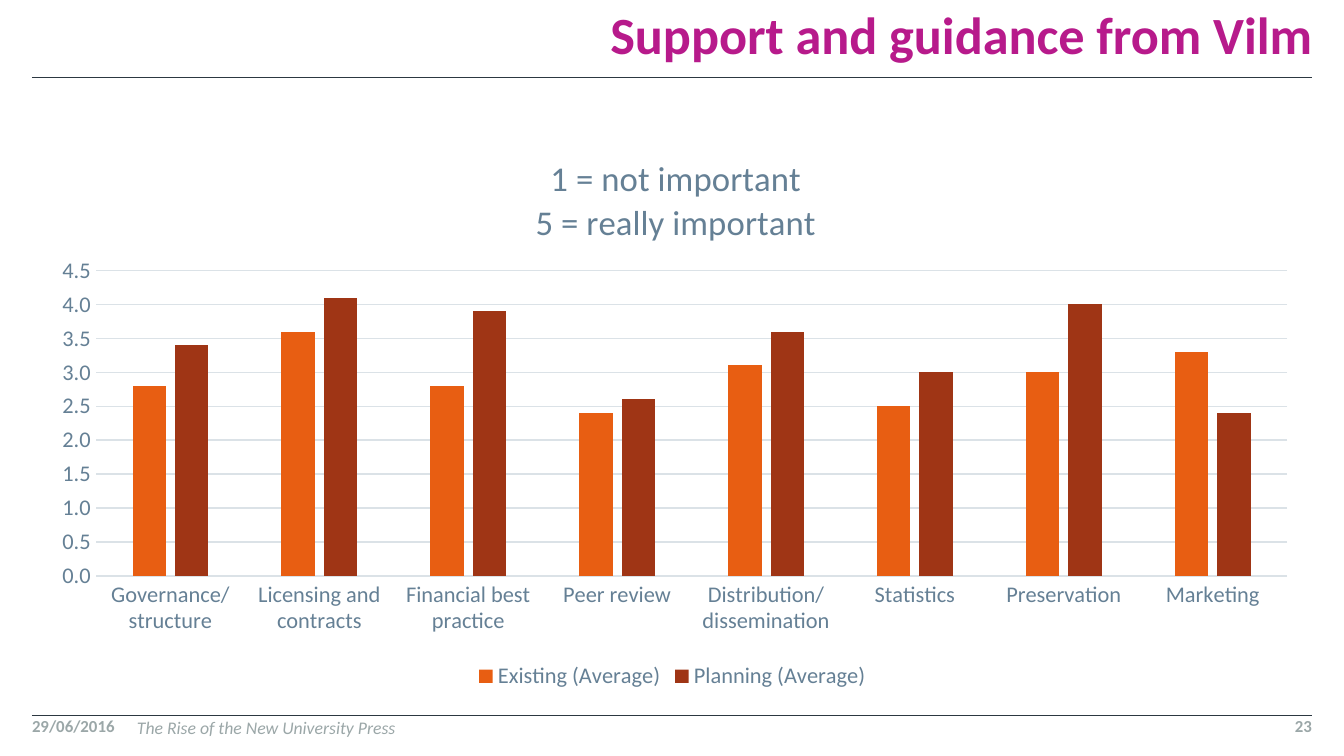
"""Build a slide with a clustered column chart of support needs."""
from dataclasses import dataclass

from lxml import etree
from pptx import Presentation
from pptx import util as u
from pptx.chart.data import CategoryChartData
from pptx.dml.color import RGBColor
from pptx.enum import chart as charts, shapes, text
from pptx.oxml import ns

SCALE = 914400 / 134.4
FONT = "Calibri"
LEFT, RIGHT = 32, 1312
COLORS = {"ink": "2C3841", "title": "B71A8B", "footer": "9BA7A8", "label": "658095",
          "grid": "DBE2E7", "Existing (Average)": "E85E12", "Planning (Average)": "9F3515"}
CATEGORIES = ["Governance/ structure", "Licensing and contracts", "Financial best practice",
              "Peer review", "Distribution/ dissemination", "Statistics", "Preservation",
              "Marketing"]
SERIES = {"Existing (Average)": [2.8, 3.6, 2.8, 2.4, 3.1, 2.5, 3, 3.3],
          "Planning (Average)": [3.4, 4.1, 3.9, 2.6, 3.6, 3, 4, 2.4]}


@dataclass(frozen=True)
class Label:
    """A line of text with its place and look."""
    words: str
    left: int
    top: int
    width: int
    height: int
    size: float
    color: str = "footer"
    bold: bool = True
    italic: bool = False
    align: text.PP_ALIGN = text.PP_ALIGN.LEFT
    anchor: text.MSO_ANCHOR = text.MSO_ANCHOR.TOP
    inset: int = 0
    spacing: float = 1.0


LABELS = [
    Label("Support and guidance from Vilm", 407, 0, 905, 66, 28, "title",
          align=text.PP_ALIGN.RIGHT, anchor=text.MSO_ANCHOR.BOTTOM, spacing=0.9),
    Label("29/06/2016", LEFT, 716, 106, 24, 9),
    Label("The Rise of the New University Press", 137, 716, 1068, 24, 9.5,
          bold=False, italic=True, inset=1),
    Label("23", 1207, 716, 105, 24, 9, align=text.PP_ALIGN.RIGHT),
]


def px(length: int) -> u.Emu:
    """Turn pixels into EMU."""
    return u.Emu(round(length * SCALE))


def rgb(name: str) -> RGBColor:
    """Look up a named colour."""
    return RGBColor.from_string(COLORS[name])


def style_font(font, size: float, color: str, bold: bool = False, italic: bool = False) -> None:
    """Set the face, size and colour of a font."""
    font.name, font.size = FONT, u.Pt(size)
    font.bold, font.italic = bold, italic
    font.color.rgb = rgb(color)


def style_line(line, color: str, width: float) -> None:
    """Set the colour and width of a line."""
    line.color.rgb = rgb(color)
    line.width = u.Pt(width)


def draw_label(page, label: Label) -> None:
    """Draw one text box."""
    box = page.shapes.add_textbox(*map(px, (label.left, label.top, label.width, label.height)))
    frame = box.text_frame
    frame.word_wrap = True
    frame.vertical_anchor = label.anchor
    frame.margin_left = frame.margin_right = frame.margin_bottom = 0
    frame.margin_top = px(label.inset)
    frame.text = label.words
    para = frame.paragraphs[0]
    para.alignment, para.line_spacing = label.align, label.spacing
    style_font(para.runs[0].font, label.size, label.color, label.bold, label.italic)


def draw_rule(page, top: int) -> None:
    """Draw a thin line across the page."""
    rule = page.shapes.add_connector(shapes.MSO_CONNECTOR.STRAIGHT,
                                     px(LEFT), px(top), px(RIGHT), px(top))
    style_line(rule.line, "ink", 0.5)
    etree.SubElement(rule._element.spPr, ns.qn("a:effectLst"))


def place(element, index: int, values: dict[str, str | float]) -> None:
    """Give a chart part a manual layout."""
    for old in element.findall(ns.qn("c:layout")):
        element.remove(old)
    layout = etree.Element(ns.qn("c:layout"))
    manual = etree.SubElement(layout, ns.qn("c:manualLayout"))
    for tag, value in values.items():
        etree.SubElement(manual, ns.qn(f"c:{tag}")).set("val", str(value))
    element.insert(index, layout)


def draw_chart(page) -> None:
    """Draw the column chart."""
    data = CategoryChartData(number_format="0.0")
    data.categories = CATEGORIES
    for name, values in SERIES.items():
        data.add_series(name, values)
    chart = page.shapes.add_chart(charts.XL_CHART_TYPE.COLUMN_CLUSTERED,
                                  px(LEFT), px(129), px(1281), px(566), data).chart
    style_font(chart.font, 10, "ink")

    title = chart.chart_title
    title.text_frame.text = "1 = not important\n5 = really important"
    for para in title.text_frame.paragraphs:
        for span in para.runs:
            style_font(span.font, 18.6, "label")
    title.include_in_layout = False
    edges = {"xMode": "edge", "yMode": "edge"}
    place(title._element, 1, edges | {"x": 0.39, "y": 0.04})
    place(chart._chartSpace.chart.plotArea, 0, {"layoutTarget": "inner"} | edges
          | {"x": 0.05, "y": 0.25, "w": 0.93, "h": 0.54})

    for axis in (chart.category_axis, chart.value_axis):
        axis.major_tick_mark = axis.minor_tick_mark = charts.XL_TICK_MARK.NONE
        style_font(axis.tick_labels.font, 12, "label")
    style_line(chart.category_axis.format.line, "grid", 0.75)
    scale = chart.value_axis
    scale.minimum_scale, scale.maximum_scale, scale.major_unit = 0, 4.5, 0.5
    scale.tick_labels.number_format = "0.0"
    scale.tick_labels.number_format_is_linked = False
    scale.format.line.fill.background()
    style_line(scale.major_gridlines.format.line, "grid", 0.75)

    chart.has_legend = True
    chart.legend.position = charts.XL_LEGEND_POSITION.BOTTOM
    chart.legend.include_in_layout = False
    style_font(chart.legend.font, 12, "label")

    plot = chart.plots[0]
    plot.gap_width, plot.overlap, plot.vary_by_categories = 219, -27, False
    for series in plot.series:
        series.invert_if_negative = False
        series.format.fill.solid()
        series.format.fill.fore_color.rgb = rgb(series.name)


def main() -> None:
    """Build and save the deck."""
    deck = Presentation()
    deck.slide_width, deck.slide_height = px(1344), px(756)
    page = deck.slides.add_slide(deck.slide_layouts[6])
    for top in (77, 716):
        draw_rule(page, top)
    for label in LABELS:
        draw_label(page, label)
    draw_chart(page)
    deck.save("out.pptx")


if __name__ == "__main__":
    main()
